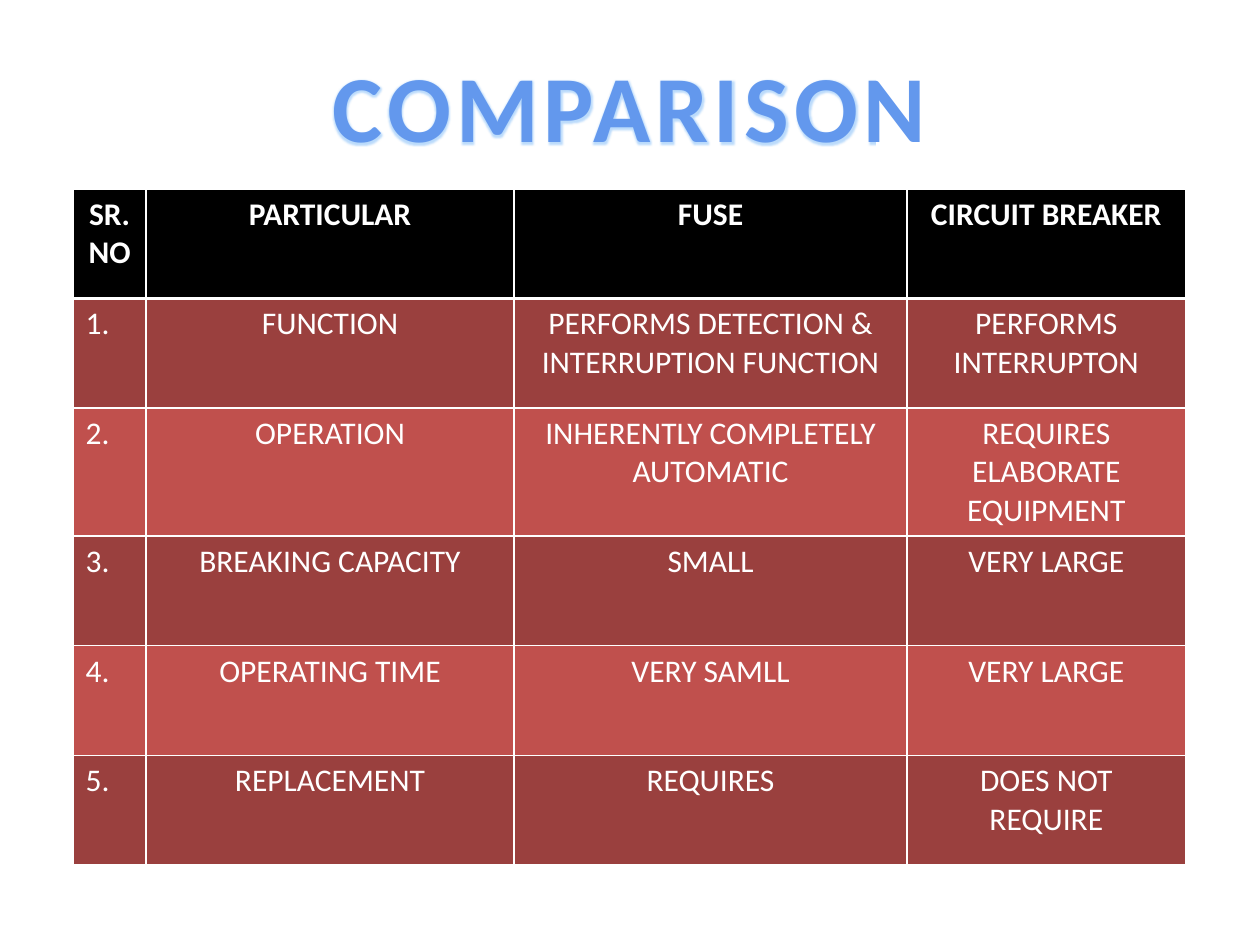
from typing import NamedTuple

from lxml import etree
from pptx import Presentation
from pptx.dml.color import RGBColor
from pptx.enum.text import MSO_ANCHOR, PP_ALIGN
from pptx.oxml import parse_xml
from pptx.oxml.ns import nsdecls, qn
from pptx.util import Inches, Pt

LEFT, CENTER = PP_ALIGN.LEFT, PP_ALIGN.CENTER
MIDDLE = MSO_ANCHOR.MIDDLE

WHITE = RGBColor(0xFF, 0xFF, 0xFF)
BLACK = RGBColor(0x00, 0x00, 0x00)
DARK_RED = RGBColor(0x9A, 0x40, 0x3E)
RED = RGBColor(0xC0, 0x50, 0x4D)
TITLE_BLUE = RGBColor(0x63, 0x98, 0xED)
TITLE_EDGE = RGBColor(0xF4, 0xF6, 0xF9)
TITLE_GLOW = RGBColor(0x8F, 0xC4, 0xFA)

FONT = "Calibri"
COLUMN_WIDTHS = (0.58, 2.92, 3.12, 2.21)
ROW_HEIGHT = 0.87


class Comparison(NamedTuple):
    number: str
    particular: str
    fuse: str
    breaker: str


HEADER = Comparison("SR.NO", "PARTICULAR", "FUSE", "CIRCUIT BREAKER")
COMPARISONS = (
    Comparison("1.", "FUNCTION", "PERFORMS DETECTION & INTERRUPTION FUNCTION",
               "PERFORMS INTERRUPTON"),
    Comparison("2.", "OPERATION", "INHERENTLY COMPLETELY AUTOMATIC",
               "REQUIRES ELABORATE EQUIPMENT"),
    Comparison("3.", "BREAKING CAPACITY", "SMALL", "VERY LARGE"),
    Comparison("4.", "OPERATING TIME", "VERY SAMLL", "VERY LARGE"),
    Comparison("5.", "REPLACEMENT", "REQUIRES", "DOES NOT REQUIRE"),
)


def add_span(para, text: str, size: float, color: RGBColor, bold: bool):
    span = para.add_run()
    span.text = text
    span.font.name = FONT
    span.font.size = Pt(size)
    span.font.bold = bold
    span.font.color.rgb = color
    return span


def fill_title(box, text: str) -> None:
    box.left, box.top = Inches(1.81), Inches(0.33)
    box.width, box.height = Inches(6.37), Inches(1.01)
    frame = box.text_frame
    frame.word_wrap = False
    frame.vertical_anchor = MIDDLE
    para = frame.paragraphs[0]
    para.alignment = CENTER
    span = add_span(para, text, 54, TITLE_BLUE, True)

    # Letter spacing, thin outline and soft halo
    properties = span.font._element
    properties.set("spc", "300")
    properties.insert(0, parse_xml(
        f'<a:ln {nsdecls("a")} w="{Pt(0.9)}"><a:solidFill>'
        f'<a:srgbClr val="{TITLE_EDGE}"/></a:solidFill></a:ln>'))
    properties.find(qn("a:solidFill")).addnext(parse_xml(
        f'<a:effectLst {nsdecls("a")}><a:glow rad="{Pt(3)}">'
        f'<a:srgbClr val="{TITLE_GLOW}"><a:alpha val="60000"/></a:srgbClr>'
        f'</a:glow></a:effectLst>'))


def add_bottom_border(cell, color: RGBColor, width: float) -> None:
    line = etree.Element(qn("a:lnB"), w=str(Pt(width)))
    fill = etree.SubElement(line, qn("a:solidFill"))
    etree.SubElement(fill, qn("a:srgbClr"), val=str(color))
    cell._tc.get_or_add_tcPr().insert(0, line)


def fill_row(table, index: int, entry: Comparison) -> None:
    is_header = index == 0
    band = BLACK if is_header else (DARK_RED if index % 2 else RED)
    table.rows[index].height = Inches(ROW_HEIGHT)
    for column, text in enumerate(entry):
        cell = table.cell(index, column)
        cell.fill.solid()
        cell.fill.fore_color.rgb = band
        para = cell.text_frame.paragraphs[0]
        para.alignment = CENTER if is_header or column else LEFT
        add_span(para, text, 18, WHITE, is_header)
        if is_header:
            add_bottom_border(cell, WHITE, 2)


def add_comparison_table(page) -> None:
    entries = (HEADER, *COMPARISONS)
    table = page.shapes.add_table(
        len(entries), len(COLUMN_WIDTHS), Inches(0.58), Inches(1.5),
        Inches(sum(COLUMN_WIDTHS)), Inches(ROW_HEIGHT * len(entries))).table
    for column, width in zip(table.columns, COLUMN_WIDTHS):
        column.width = Inches(width)
    for index, entry in enumerate(entries):
        fill_row(table, index, entry)


def main() -> None:
    deck = Presentation()
    deck.slide_width, deck.slide_height = Inches(10), Inches(7.5)
    page = deck.slides.add_slide(deck.slide_layouts.get_by_name("Title Only"))
    fill_title(page.shapes.title, "COMPARISON")
    add_comparison_table(page)
    deck.save("out.pptx")


if __name__ == "__main__":
    main()
